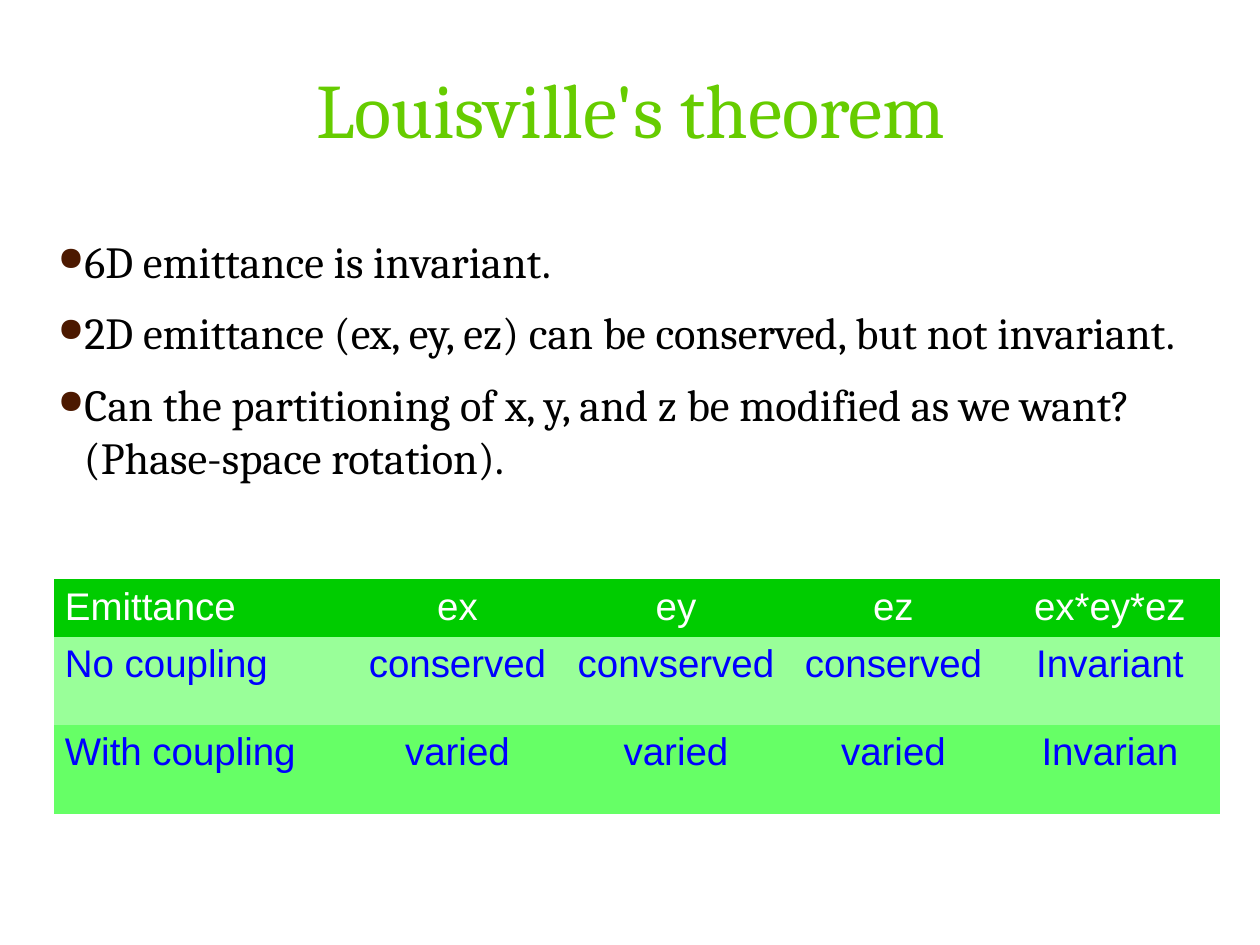
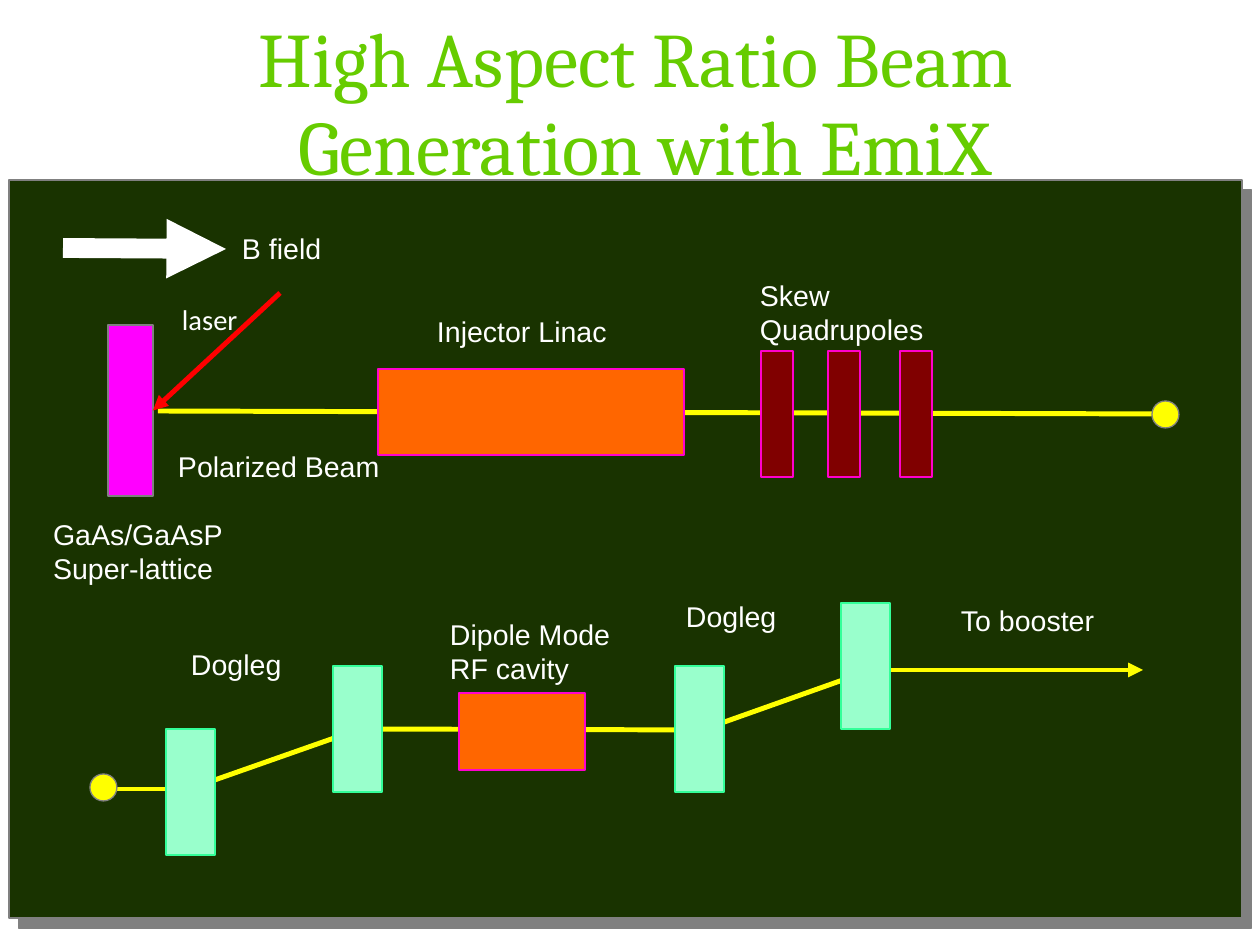
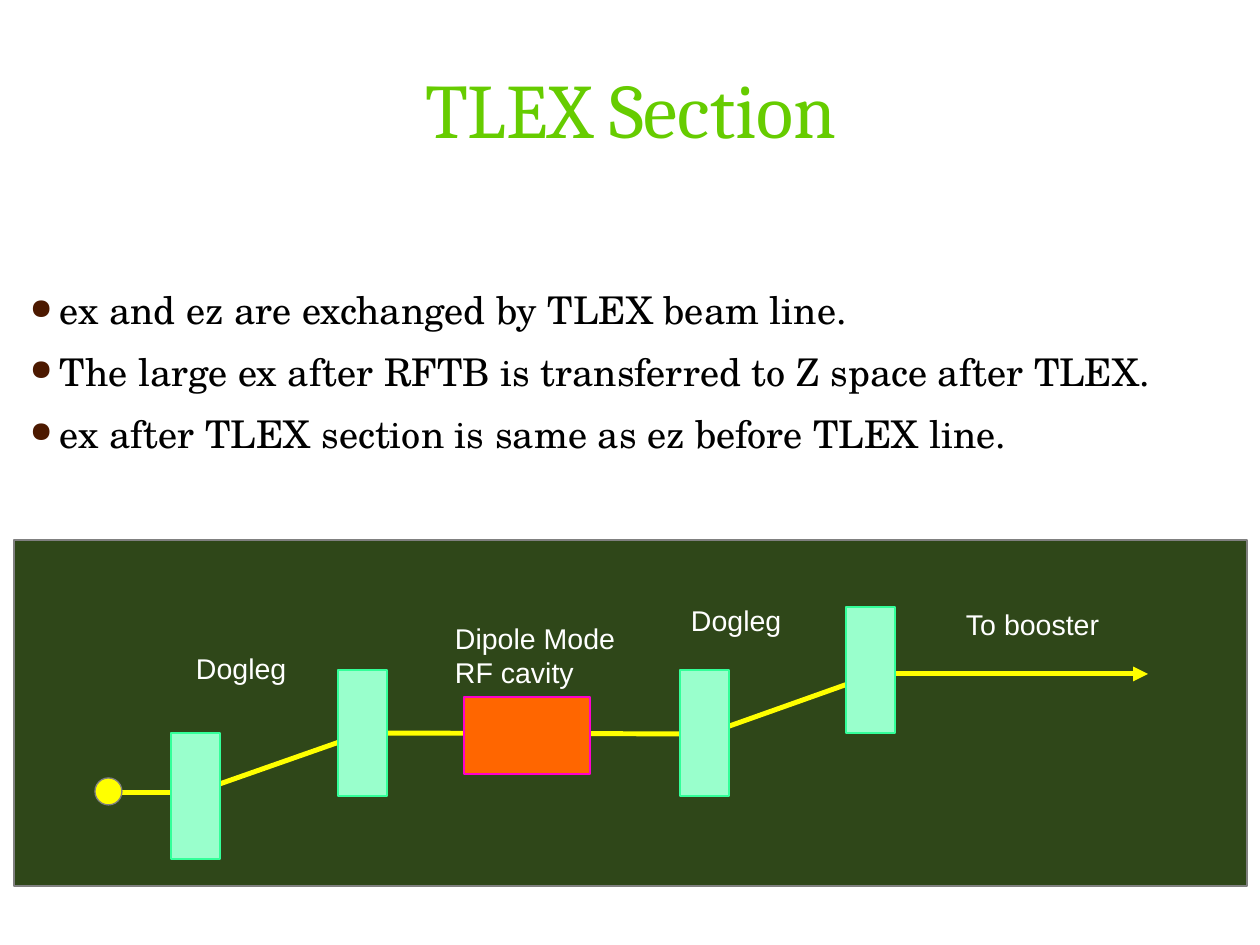
import pptx
import pptx.util
import pptx.dml.color
import pptx.enum.shapes
import pptx.enum.text
import pptx.oxml
import pptx.oxml.ns
from lxml import etree

# Content
THEOREM_POINTS = [
    "6D emittance is invariant.",
    "2D emittance (ex, ey, ez) can be conserved, but not invariant.",
    "Can the partitioning of x, y, and z be modified as we want? (Phase-space rotation).",
]
EMITTANCE_ROWS = [
    ("Emittance", "ex", "ey", "ez", "ex*ey*ez"),
    ("No coupling", "conserved", "convserved", "conserved", "Invariant"),
    ("With coupling", "varied", "varied", "varied", "Invarian"),
]
TLEX_POINTS = [
    "ex and ez are exchanged by TLEX beam line.",
    "The large ex after RFTB is transferred to Z space after TLEX.",
    "ex after TLEX section is same as ez before TLEX line.",
]
# Labels: paragraphs, then left, top, width, height
INJECTOR_LABELS = [
    (["GaAs/GaAsP", "Super-lattice"], (42, 509, 196, 76)),
    (["Polarized Beam"], (167, 441, 228, 43)),
    (["B field"], (231, 223, 141, 43)),
    (["Skew Quadrupoles"], (749, 270, 263, 76)),
    (["Injector Linac"], (426, 306, 263, 43)),
]
TLEX_LABELS = [
    (["To booster"], (950, 595, 229, 76)),
    (["Dipole Mode", "RF cavity"], (439, 609, 263, 76)),
    (["Dogleg"], (180, 639, 263, 76)),
    (["Dogleg"], (675, 591, 263, 76)),
]
# Places in px
COLUMN_WIDTHS = [296, 215, 222, 213, 220]
ROW_HEIGHTS = [57, 88, 89]
ROW_STYLES = [("00CC00", "FFFFFF"), ("99FF99", "0000FF"), ("66FF66", "0000FF")]
QUADRUPOLE_LEFTS = [761, 828, 900]
DOGLEG_MAGNETS = [(166, 729), (333, 666), (675, 666), (841, 603)]
TLEX_BEAM = [(108, 789), (189, 789), (360, 729), (702, 730), (871, 670), (1143, 670)]

# Shared look
TITLE_GREEN, BULLET_BROWN, PANEL_GREEN = "66CC00", "4C1900", "193300"
BEAM_YELLOW, CAVITY_ORANGE, CAVITY_EDGE = "FFFF00", "FF6600", "FF00CC"
WHITE, GRAY, BLACK = "FFFFFF", "808080", "000000"
LABEL_INSETS = (11, 8, 11, 5)
BOX = pptx.enum.shapes.MSO_SHAPE.ROUNDED_RECTANGLE
DISC = pptx.enum.shapes.MSO_SHAPE.OVAL
NO_TABLE_STYLE = "{2D5ABB26-0587-4C30-8999-92F81FD0307C}"
qn = pptx.oxml.ns.qn


def px(length):
    return pptx.util.Emu(round(length * 914400 / 126))


def color(value):
    return pptx.dml.color.RGBColor.from_string(value)


def add_xml(parent, tag, **attributes):
    child = etree.SubElement(parent, qn(tag))
    for name, value in attributes.items():
        child.set(name, str(value))
    return child


def write(frame, paragraphs, size, font="Arial", fill=WHITE, centered=False,
          line_spacing=None, gap=None, indent=None):
    """Fill a text frame; an indent makes the paragraphs bulleted."""
    for index, text in enumerate(paragraphs):
        paragraph = frame.add_paragraph() if index else frame.paragraphs[0]
        paragraph.text = text
        if centered:
            paragraph.alignment = pptx.enum.text.PP_ALIGN.CENTER
        if line_spacing:
            paragraph.line_spacing = line_spacing
        if gap:
            paragraph.space_before = paragraph.space_after = pptx.util.Pt(gap)
        for run in paragraph.runs:
            run.font.size = pptx.util.Pt(size)
            run.font.name = font
            run.font.color.rgb = color(fill)
        if indent:
            properties = paragraph._p.get_or_add_pPr()
            properties.set("marL", str(px(indent)))
            properties.set("indent", str(-px(indent)))
            add_xml(add_xml(properties, "a:buClr"), "a:srgbClr", val=BULLET_BROWN)
            add_xml(properties, "a:buSzPct", val=75000)
            add_xml(properties, "a:buChar", char="●")


def set_margins(target, insets):
    left, top, right, bottom = map(px, insets)
    target.margin_left, target.margin_top = left, top
    target.margin_right, target.margin_bottom = right, bottom


def add_text(slide, paragraphs, place, insets=LABEL_INSETS, middle=False, **style):
    frame = slide.shapes.add_textbox(*map(px, place)).text_frame
    frame.word_wrap = True
    set_margins(frame, insets)
    if middle:
        frame.vertical_anchor = pptx.enum.text.MSO_ANCHOR.MIDDLE
    write(frame, paragraphs, **style)


def add_title(slide, text, place=(93, 35, 1076, 158)):
    add_text(slide, [text], place, insets=(13, 3, 13, 6), middle=True, size=44,
             font="Cambria", fill=TITLE_GREEN, centered=True, line_spacing=0.95)


def add_labels(slide, labels, dx=0, dy=0):
    for paragraphs, (left, top, width, height) in labels:
        add_text(slide, paragraphs, (left + dx, top + dy, width, height), size=16.3)


def add_part(slide, place, fill, edge, kind=BOX):
    shape = slide.shapes.add_shape(kind, *map(px, place))
    if kind == BOX:
        shape.adjustments[0] = 0
    shape.shadow.inherit = False
    shape.fill.solid()
    shape.fill.fore_color.rgb = color(fill)
    shape.line.color.rgb = color(edge)
    shape.line.width = pptx.util.Pt(0.75)
    return shape


def add_line(slide, start, end, fill=BEAM_YELLOW, width=2.83, arrow=False):
    connector = slide.shapes.add_connector(
        pptx.enum.shapes.MSO_CONNECTOR.STRAIGHT, *map(px, start + end))
    connector.line.color.rgb = color(fill)
    connector.line.width = pptx.util.Pt(width)
    properties = connector._element.spPr
    if arrow:
        add_xml(properties.find(qn("a:ln")), "a:tailEnd", type="triangle")
    add_xml(properties, "a:effectLst")
    return connector


def add_tlex_line(slide, dx=0, dy=0):
    """Dogleg, dipole-mode cavity, dogleg: the line on both diagrams."""
    points = [(x + dx, y + dy) for x, y in TLEX_BEAM]
    for start, end in zip(points, points[1:]):
        add_line(slide, start, end, arrow=end == points[-1])
    add_part(slide, (90 + dx, 774 + dy, 27, 27), BEAM_YELLOW, GRAY, DISC)
    add_part(slide, (459 + dx, 693 + dy, 126, 77), CAVITY_ORANGE, CAVITY_EDGE)
    for left, top in DOGLEG_MAGNETS:
        add_part(slide, (left + dx, top + dy, 49, 126), "99FFCC", "33FF99")
    add_labels(slide, TLEX_LABELS, dx, dy)


def build_theorem(slide):
    add_title(slide, "Louisville's theorem")
    add_text(slide, THEOREM_POINTS, (45, 234, 1152, 617), insets=(13, 0, 13, 6),
             size=25.4, font="Cambria", fill=BLACK, gap=5.2, indent=26)
    # Emittance table
    place = (54, 579, sum(COLUMN_WIDTHS), sum(ROW_HEIGHTS))
    table = slide.shapes.add_table(
        len(ROW_HEIGHTS), len(COLUMN_WIDTHS), *map(px, place)).table
    table.first_row = table.horz_banding = False
    table._tbl.tblPr.find(qn("a:tableStyleId")).text = NO_TABLE_STYLE
    for column, width in zip(table.columns, COLUMN_WIDTHS):
        column.width = px(width)
    for row, height, texts, (background, ink) in zip(
            table.rows, ROW_HEIGHTS, EMITTANCE_ROWS, ROW_STYLES):
        row.height = px(height)
        for index, (cell, text) in enumerate(zip(row.cells, texts)):
            cell.fill.solid()
            cell.fill.fore_color.rgb = color(background)
            set_margins(cell, (11, 9, 11, 6))
            write(cell.text_frame, [text], size=22, fill=ink,
                  centered=index > 0, line_spacing=0.93)


def build_beam_generation(slide):
    # Panel with its shadow
    panel = add_part(slide, (9, 180, 1233, 738), PANEL_GREEN, GRAY)
    effects = panel._element.spPr.find(qn("a:effectLst"))
    shadow = add_xml(effects, "a:outerShdw", dist=pptx.util.Pt(8), dir=45 * 60000)
    add_xml(shadow, "a:srgbClr", val=GRAY)
    add_title(slide, "High Aspect Ratio Beam \vGeneration with EmiX", (100, 5, 1089, 203))
    # Injector
    cathode = add_part(slide, (108, 325, 45, 171), "FF00FF", GRAY)
    add_line(slide, (158, 411), (1165, 414))
    laser = add_line(slide, (280, 293), (153, 411), fill="FF0000", arrow=True)
    laser.end_connect(cathode, 3)
    add_line(slide, (63, 248), (226, 249), fill=WHITE, width=11.34, arrow=True)
    add_part(slide, (378, 369, 306, 86), CAVITY_ORANGE, CAVITY_EDGE)
    for left in QUADRUPOLE_LEFTS:
        add_part(slide, (left, 351, 32, 126), "800000", CAVITY_EDGE)
    add_part(slide, (1152, 401, 27, 27), BEAM_YELLOW, GRAY, DISC)
    add_labels(slide, INJECTOR_LABELS)
    add_text(slide, ["laser"], (171, 294, 88, 43), size=16.3, font="Calibri")
    add_tlex_line(slide)


def build_tlex_section(slide):
    add_title(slide, "TLEX Section")
    add_text(slide, TLEX_POINTS, (30, 289, 1171, 422), insets=(0, 1, 0, 0),
             size=21.8, font="TeX Gyre Schola", fill=BLACK, line_spacing=0.95,
             gap=5.2, indent=30)
    # Translucent panel
    panel = add_part(slide, (14, 540, 1233, 346), PANEL_GREEN, GRAY)
    panel_color = panel._element.spPr.find(qn("a:solidFill")).find(qn("a:srgbClr"))
    add_xml(panel_color, "a:alpha", val=90000)
    add_tlex_line(slide, dx=5, dy=4)


def main():
    presentation = pptx.Presentation()
    presentation.slide_width, presentation.slide_height = px(1260), px(945)
    for build in (build_theorem, build_beam_generation, build_tlex_section):
        build(presentation.slides.add_slide(presentation.slide_layouts[6]))
    presentation.save("out.pptx")


if __name__ == "__main__":
    main()
